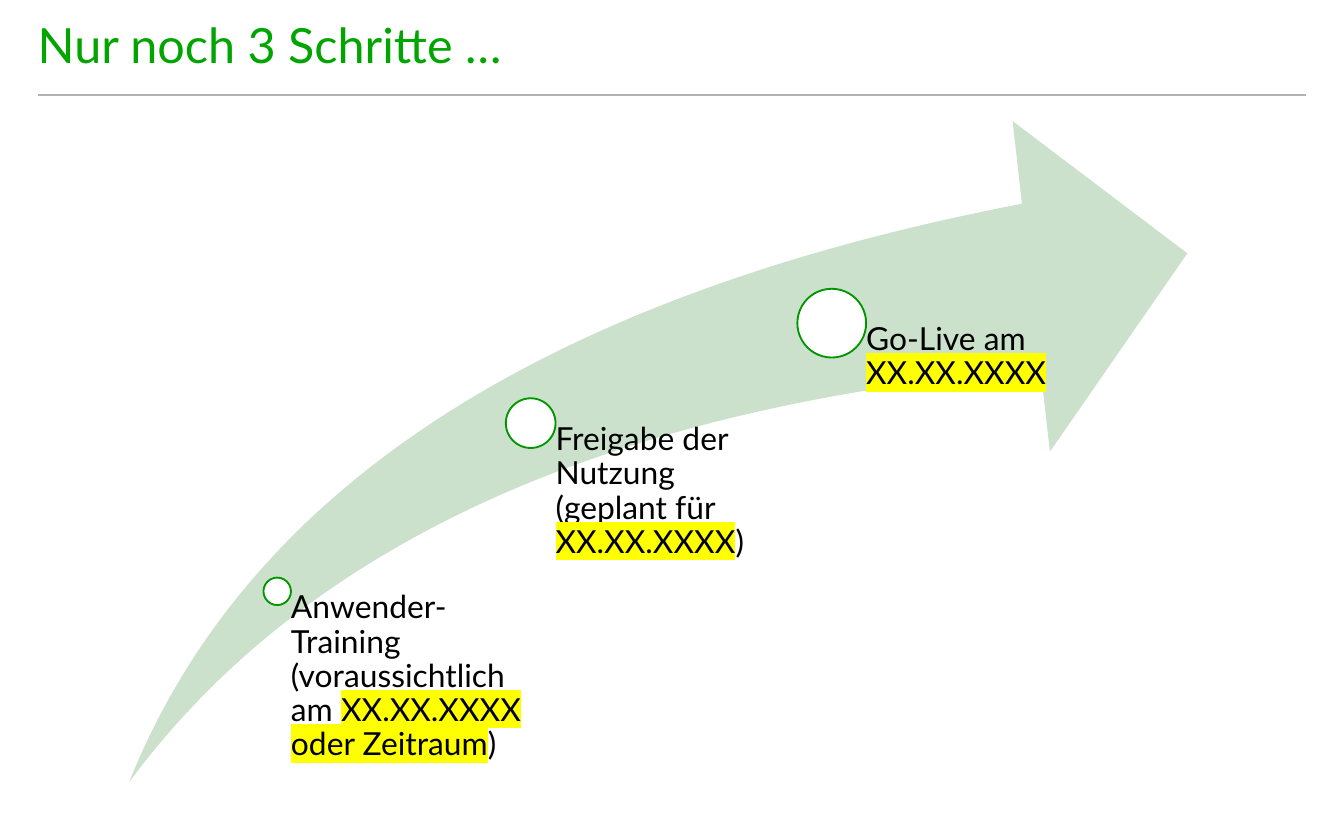
from lxml import etree
from pptx import Presentation
from pptx.dml.color import RGBColor
from pptx.enum.shapes import MSO_CONNECTOR, MSO_SHAPE
from pptx.enum.text import MSO_ANCHOR, MSO_AUTO_SIZE, PP_ALIGN
from pptx.oxml.ns import qn
from pptx.util import Cm, Pt

LINE = MSO_CONNECTOR.STRAIGHT
SWOOSH, OVAL = MSO_SHAPE.SWOOSH_ARROW, MSO_SHAPE.OVAL
TOP, MIDDLE = MSO_ANCHOR.TOP, MSO_ANCHOR.MIDDLE
NO_FIT, LEFT = MSO_AUTO_SIZE.NONE, PP_ALIGN.LEFT

GREEN = RGBColor(0x00, 0xA5, 0x00)
RING = RGBColor(0x00, 0x96, 0x00)
PALE = RGBColor(0xCC, 0xE1, 0xCC)
GREY = RGBColor(0xB2, 0xB2, 0xB2)
YELLOW = RGBColor(0xFF, 0xFF, 0x00)
WHITE = RGBColor(0xFF, 0xFF, 0xFF)
BLACK = RGBColor(0x00, 0x00, 0x00)

# Each step: centre x and y in the arrow's box, dot size, text width (cm), runs.
# A run is its text and whether it is marked.
STEPS = [
    (2.8, 8.89, 0.52, 4.65, [("Anwender-Training (voraussichtlich am ", False),
                             ("XX.XX.XXXX oder Zeitraum", True), (")", False)]),
    (7.59, 5.71, 0.94, 4.8, [("Freigabe der Nutzung (geplant für ", False),
                             ("XX.XX.XXXX", True), (")", False)]),
    (13.28, 3.82, 1.3, 4.8, [("Go-Live am ", False), ("XX.XX.XXXX", True)]),
]


def style(item, values):
    for name, value in values.items():
        setattr(item, name, value)


def mark(run):
    """Highlight a run that already has its colour."""
    fill = run.font._element.find(qn("a:solidFill"))
    light = etree.Element(qn("a:highlight"))
    etree.SubElement(light, qn("a:srgbClr"), val=str(YELLOW))
    fill.addnext(light)


def write(frame, runs, size, color, anchor, inset=0):
    style(frame, {"word_wrap": True, "auto_size": NO_FIT,
                  "vertical_anchor": anchor, "margin_left": Cm(inset),
                  "margin_top": 0, "margin_right": 0, "margin_bottom": 0})
    para = frame.paragraphs[0]
    style(para, {"alignment": LEFT, "line_spacing": 0.9})
    for text, marked in runs:
        run = para.add_run()
        run.text = text
        style(run.font, {"size": Pt(size), "name": "Lato"})
        run.font.color.rgb = color
        if marked:
            mark(run)


def add_form(slide, kind, x, y, w, h, fill, edge=None):
    form = slide.shapes.add_shape(kind, Cm(x), Cm(y), Cm(w), Cm(h))
    form.shadow.inherit = False
    form.fill.solid()
    form.fill.fore_color.rgb = fill
    if edge is None:
        form.line.fill.background()
    else:
        form.line.color.rgb = edge
        form.line.width = Pt(1)
    return form


def add_head(slide, x, y, w, h):
    # Title
    title = slide.shapes.title
    style(title, {"left": Cm(x), "top": Cm(y), "width": Cm(w), "height": Cm(h)})
    write(title.text_frame, [("Nur noch 3 Schritte …", False)], 26, GREEN, MIDDLE)
    # Rule along the lower edge
    rule = slide.shapes.add_connector(LINE, Cm(x), Cm(y + h), Cm(x + w), Cm(y + h))
    rule.line.color.rgb = GREY
    rule.line.width = Pt(1)
    etree.SubElement(rule._element.spPr, qn("a:effectLst"))


def add_path(slide, x, y, w, h):
    # Rising arrow
    arrow = add_form(slide, SWOOSH, x, y, w, h, PALE)
    arrow.adjustments[0] = 0.25
    arrow.adjustments[1] = 0.25
    # Each text starts at its dot's centre and runs to the foot of the box
    for dx, dy, size, wide, runs in STEPS:
        half = size / 2
        add_form(slide, OVAL, x + dx - half, y + dy - half, size, size, WHITE, RING)
        label = slide.shapes.add_textbox(Cm(x + dx), Cm(y + dy), Cm(wide), Cm(h - dy))
        write(label.text_frame, runs, 17, BLACK, TOP, half)


def main():
    deck = Presentation()
    style(deck, {"slide_width": Cm(25.4), "slide_height": Cm(15.88)})
    slide = deck.slides.add_slide(deck.slide_layouts[5])
    add_head(slide, 0.71, 0, 23.98, 1.8)
    add_path(slide, 2.44, 2.29, 20, 12.5)
    deck.save("out.pptx")


if __name__ == "__main__":
    main()
